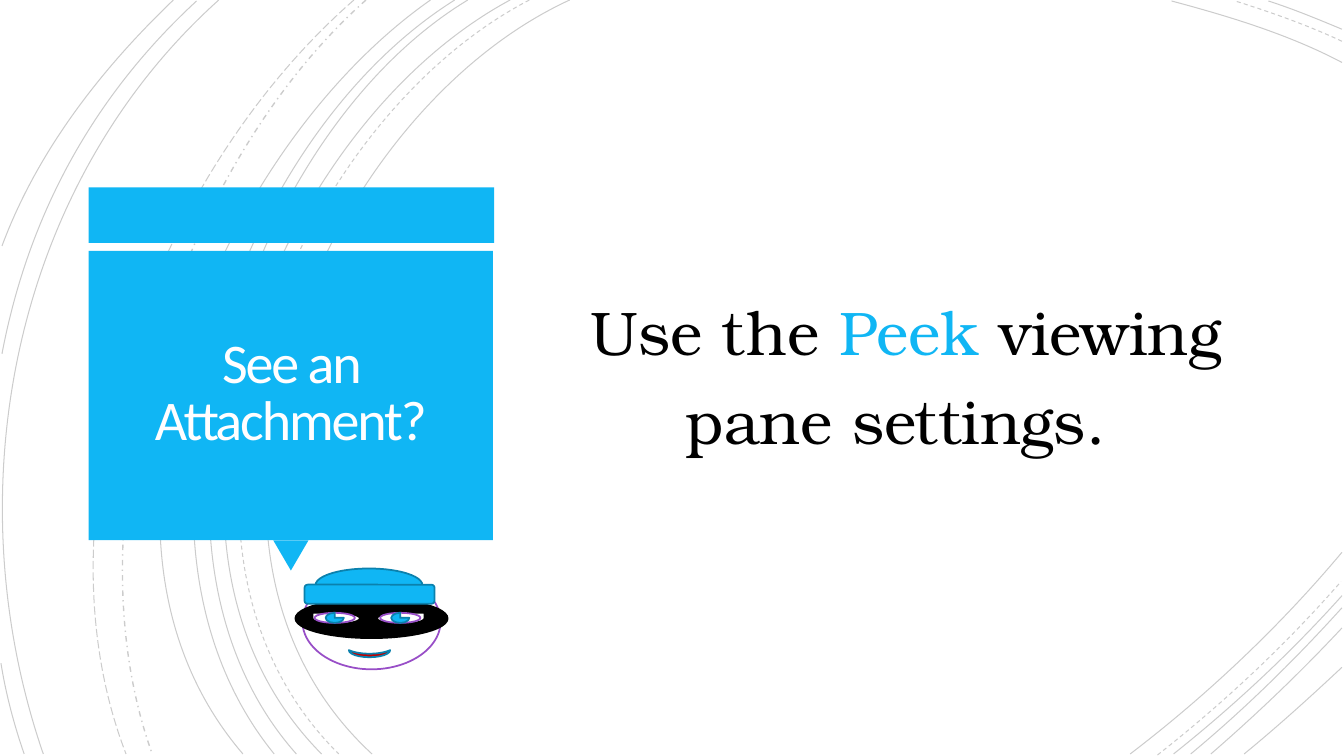
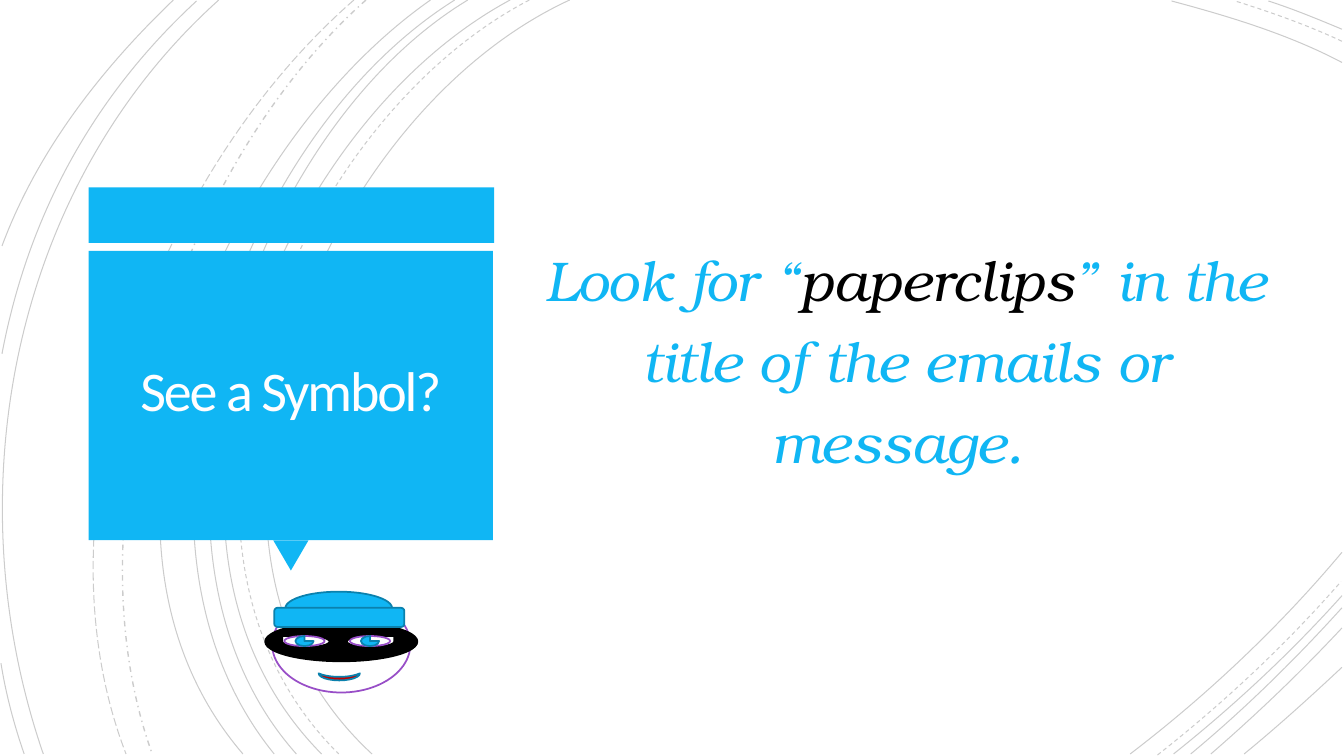
from pptx import Presentation
from pptx.dml.color import RGBColor
from pptx.enum.dml import MSO_LINE
from pptx.enum.shapes import MSO_SHAPE
from pptx.enum.text import MSO_ANCHOR, PP_ALIGN
from pptx.oxml.ns import qn
from pptx.util import Inches, Pt
from lxml.etree import SubElement

COLORS = {
    "blue": "10B6F4", "edge": "0B81AD", "violet": "984EC7", "red": "C00000",
    "black": "000000", "white": "FFFFFF", "title": "FFFEFF",
}
SOLID, DASH = MSO_LINE.SOLID, MSO_LINE.DASH

# Background arcs: start, two control points, end; then dash and width
ARCS = [
    ((5.65, 0), (3.15, 1.15), (1.43, 5.4), (3.69, 7.48), SOLID, 0.75),
    ((13.31, 0.62), (12.78, 0.34), (12.18, 0.16), (11.62, 0.01), SOLID, 0.75),
    ((11.21, 7.48), (11.97, 6.9), (12.69, 6.22), (13.31, 5.48), SOLID, 0.75),
    ((5.25, 0), (2.85, 1.25), (1.23, 5.37), (3.36, 7.48), DASH, 0.75),
    ((13.31, 0.41), (12.97, 0.25), (12.6, 0.12), (12.25, 0.01), DASH, 0.75),
    ((11.48, 7.49), (12.13, 6.98), (12.75, 6.4), (13.3, 5.77), DASH, 0.75),
    ((5.06, 0), (2.7, 1.27), (1.1, 5.37), (3.19, 7.48), SOLID, 0.75),
    ((13.31, 0.29), (13.07, 0.19), (12.83, 0.09), (12.58, 0.01), SOLID, 0.75),
    ((11.64, 7.48), (12.23, 7.01), (12.8, 6.48), (13.31, 5.91), SOLID, 0.75),
    ((4.64, 0), (2.44, 1.33), (1.1, 5.41), (2.94, 7.48), SOLID, 0.75),
    ((11.81, 7.48), (12.34, 7.04), (12.84, 6.55), (13.31, 6.03), SOLID, 0.75),
    ((4.51, 0), (2.31, 1.38), (0.97, 5.33), (2.72, 7.48), SOLID, 0.75),
    ((12.01, 7.48), (12.46, 7.09), (12.9, 6.67), (13.31, 6.23), SOLID, 0.75),
    ((4.27, 0), (2.17, 1.47), (0.53, 5.29), (2.41, 7.48), SOLID, 0.75),
    ((12.34, 7.48), (12.67, 7.21), (12.99, 6.92), (13.31, 6.62), SOLID, 0.75),
    ((3.63, 0), (1.76, 1.66), (0.65, 5.09), (1.51, 7.48), MSO_LINE.DASH_DOT, 1),
    ((3.51, 0), (1.57, 1.69), (0.29, 4.99), (1.25, 7.48), MSO_LINE.LONG_DASH, 0.75),
    ((2.17, 0), (0.11, 1.85), (-0.46, 4.9), (0.43, 7.48), SOLID, 0.75),
    ((1.95, 0.01), (0.92, 0.96), (0.28, 2.14), (0.02, 3.51), SOLID, 0.75),
    ((0.01, 6.58), (0.06, 6.89), (0.14, 7.19), (0.24, 7.48), SOLID, 0.75),
    ((1.72, 0), (1, 0.69), (0.37, 1.5), (0.02, 2.44), SOLID, 0.75),
]


def rgb(name):
    return RGBColor.from_string(COLORS[name])


def add_arc(group, start, bend1, bend2, end, dash, width):
    pen = group.shapes.build_freeform(Inches(start[0]), Inches(start[1]))
    pen.add_line_segments([(Inches(x), Inches(y)) for x, y in (bend1, bend2, end)],
                          close=False)
    arc = pen.convert_to_shape()
    arc.shadow.inherit = False
    arc.fill.background()
    arc.line.color.rgb = rgb("black")
    arc.line.width = Pt(width)
    arc.line.dash_style = dash
    # Turn the three segments into one cubic curve
    steps = arc.element.xpath(".//a:lnTo")
    curve = SubElement(steps[0].getparent(), qn("a:cubicBezTo"))
    for step in steps:
        curve.append(step[0])
        step.getparent().remove(step)
    # Line at 20 % opacity
    ink = arc.element.xpath(".//a:ln//a:srgbClr")[0]
    SubElement(ink, qn("a:alpha")).set("val", "20000")


def add_part(group, kind, x, y, w, h, fill, line=None, turn=0, flip=False):
    part = group.shapes.add_shape(kind, Inches(x), Inches(y), Inches(w), Inches(h))
    part.shadow.inherit = False
    part.fill.solid()
    part.fill.fore_color.rgb = rgb(fill)
    if line:
        part.line.color.rgb = rgb(line)
        part.line.width = Pt(1.25)
    else:
        part.line.fill.background()
    part.rotation = turn
    if flip:
        part.element.xpath("./p:spPr/a:xfrm")[0].set("flipH", "1")


def add_text(slide, runs, x, y, w, h, *, font, size, inset=None, leading=1.0,
             before=0, italic=False, track=None):
    box = slide.shapes.add_textbox(Inches(x), Inches(y), Inches(w), Inches(h))
    frame = box.text_frame
    frame.word_wrap = True
    frame.vertical_anchor = MSO_ANCHOR.MIDDLE
    if inset is not None:
        frame.margin_left = frame.margin_right = Inches(inset)
        frame.margin_top = frame.margin_bottom = Inches(inset)
    para = frame.paragraphs[0]
    para.alignment = PP_ALIGN.CENTER
    para.line_spacing = leading
    para.space_before = Pt(before)
    for words, color in runs:
        run = para.add_run()
        run.text = words
        run.font.name = font
        run.font.size = Pt(size)
        run.font.italic = italic
        run.font.color.rgb = rgb(color)
        if track is not None:
            run.font._element.set("spc", str(round(track * 100)))


def add_base(slide, title):
    # Arcs behind everything
    arcs = slide.shapes.add_group_shape()
    for arc in ARCS:
        add_arc(arcs, *arc)
    # Speech panel
    panel = slide.shapes.add_group_shape()
    add_part(panel, MSO_SHAPE.RECTANGLE, 0.88, 1.86, 4.02, 0.55, "blue")
    add_part(panel, MSO_SHAPE.ISOSCELES_TRIANGLE, 2.71, 5.36, 0.35, 0.3, "blue", turn=180)
    add_part(panel, MSO_SHAPE.RECTANGLE, 0.88, 2.49, 4.01, 2.87, "blue")
    add_text(slide, [(title, "title")], 0.97, 2.57, 3.83, 2.69,
             font="Calibri", size=40, inset=0.25, leading=0.85, track=-1.5)


def add_face(slide, x, y):
    face = slide.shapes.add_group_shape()
    oval = MSO_SHAPE.OVAL
    # Head and mask
    add_part(face, oval, x + 0.07, y + 0.05, 1.37, 0.95, "white", "violet")
    add_part(face, oval, x, y + 0.3, 1.51, 0.39, "black", "black")
    for dx, flip in ((0.81, False), (0.17, True)):
        add_part(face, MSO_SHAPE.TEAR, x + dx, y + 0.44, 0.47, 0.11,
                 "white", "black", flip=flip)
    # Hat and mouth
    add_part(face, oval, x + 0.2, y, 1.06, 0.33, "blue", "edge")
    add_part(face, MSO_SHAPE.ROUNDED_RECTANGLE, x + 0.09, y + 0.16, 1.29, 0.19,
             "blue", "edge")
    add_part(face, MSO_SHAPE.MOON, x + 0.7, y + 0.64, 0.07, 0.41, "red", "edge", turn=270)
    # Eyes
    for dx in (0.19, 0.84):
        add_part(face, oval, x + dx, y + 0.44, 0.4, 0.1, "white", "violet")
        add_part(face, MSO_SHAPE.PIE, x + dx + 0.11, y + 0.44, 0.18, 0.1, "blue", "edge")


def add_tip(deck, title, runs, top, high, size, spot, italic=False):
    slide = deck.slides.add_slide(deck.slide_layouts[6])
    add_base(slide, title)
    add_text(slide, runs, 5.13, top, 7.71, high, font="TeX Gyre Bonum", size=size,
             leading=1.2, before=10, italic=italic)
    add_face(slide, *spot)


def main():
    deck = Presentation()
    deck.slide_width, deck.slide_height = Inches(13.33), Inches(7.5)
    add_tip(deck, "See an Attachment?",
            [("Use the ", "black"), ("Peek", "blue"),
             (" viewing pane settings. ", "black")],
            top=1.67, high=3.96, size=44, spot=(2.93, 5.64))
    add_tip(deck, "See a Symbol?",
            [("Look for “", "blue"), ("paperclips", "black"),
             ("” in the title of the emails or message. ", "blue")],
            top=1.38, high=4.25, size=40, spot=(2.63, 5.87), italic=True)
    deck.save("out.pptx")


if __name__ == "__main__":
    main()
